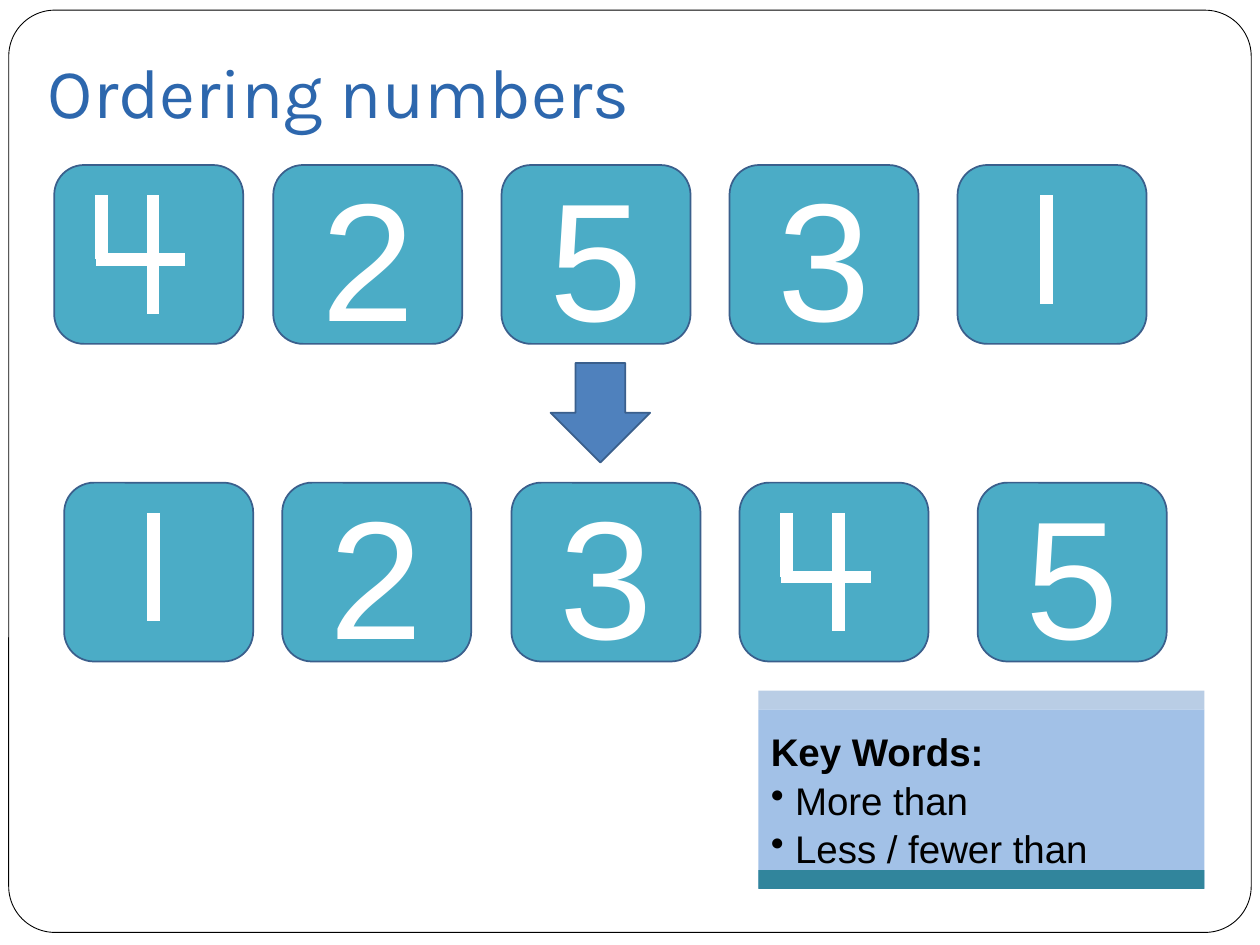
from lxml import etree
from pptx import Presentation
from pptx import util as u
from pptx.dml.color import RGBColor
from pptx.enum import shapes, text
from pptx.oxml.ns import qn

OUTLINE = "3A5F8C"
TILE_WIDTH, TILE_HEIGHT = 108, 102.2

# Digits drawn with straight strokes: x1, y1, x2, y2 from the tile's corner
STROKES = {
    "1": [(51, 17.3, 51, 79.2)],
    "4": [(56.5, 17.3, 56.5, 85), (27, 17.3, 27, 54), (23.8, 54, 74.9, 54)],
}

# Each row: top, then digit and left edge of every tile
ROWS = [
    (94.3, zip("42513"[:3] + "31", (31, 156.2, 286.6, 416.9, 547.2))),
    (275.8, zip("12345", (36.7, 161.3, 292.3, 422.6, 558.7))),
]
ROWS[0] = (94.3, zip("42531", (31, 156.2, 286.6, 416.9, 547.2)))


def color(value):
    return RGBColor.from_string(value)


class SlideBuilder:
    font = "Arial"

    def __init__(self, slide):
        self.slide = slide

    def format_runs(self, paragraph, size, fill, font=None, bold=False):
        for run in paragraph.runs:
            run.font.name = font or self.font
            run.font.size = u.Pt(size)
            run.font.bold = bold
            run.font.color.rgb = color(fill)

    def shape(self, kind, left, top, width, height, fill, line=None, weight=1):
        shape = self.slide.shapes.add_shape(
            kind, u.Pt(left), u.Pt(top), u.Pt(width), u.Pt(height))
        shape.shadow.inherit = False
        shape.fill.solid()
        shape.fill.fore_color.rgb = color(fill)
        if line:
            shape.line.color.rgb = color(line)
            shape.line.width = u.Pt(weight)
        else:
            shape.line.fill.background()
        return shape

    def stroke(self, x1, y1, x2, y2):
        line = self.slide.shapes.add_connector(
            shapes.MSO_CONNECTOR.STRAIGHT, u.Pt(x1), u.Pt(y1), u.Pt(x2), u.Pt(y2))
        line.line.color.rgb = color("FFFFFF")
        line.line.width = u.Pt(7.25)
        etree.SubElement(line.element.spPr, qn("a:effectLst"))

    def title(self, words):
        title = self.slide.shapes.title
        title.left, title.top = u.Pt(20.2), u.Pt(21.6)
        title.width, title.height = u.Pt(663.8), u.Pt(61.2)
        frame = title.text_frame
        frame.text = words
        frame.vertical_anchor = text.MSO_ANCHOR.BOTTOM
        frame.margin_bottom = u.Pt(7.2)
        frame.paragraphs[0].alignment = text.PP_ALIGN.LEFT
        self.format_runs(frame.paragraphs[0], 40, "2D67AD", "Karla")

    def tile(self, digit, left, top):
        tile = self.shape(shapes.MSO_SHAPE.ROUNDED_RECTANGLE, left, top,
                          TILE_WIDTH, TILE_HEIGHT, "4BACC6", OUTLINE)
        if digit in STROKES:
            for x1, y1, x2, y2 in STROKES[digit]:
                self.stroke(left + x1, top + y1, left + x2, top + y2)
        else:
            frame = tile.text_frame
            frame.text = digit
            frame.vertical_anchor = text.MSO_ANCHOR.MIDDLE
            frame.paragraphs[0].alignment = text.PP_ALIGN.CENTER
            self.format_runs(frame.paragraphs[0], 96, "FFFFFF")

    def key_words(self, left, top, width, heading, items):
        rectangle = shapes.MSO_SHAPE.RECTANGLE
        box = self.shape(rectangle, left, top + 10.8, width, 102.2, "A2C1E7")
        self.shape(rectangle, left, top, width, 10.8, "B9CDE5")
        self.shape(rectangle, left, top + 102.6, width, 10.8, "31859C")
        frame = box.text_frame
        frame.text = "\n".join([heading] + [" " + item for item in items])
        frame.vertical_anchor = text.MSO_ANCHOR.MIDDLE
        for index, paragraph in enumerate(frame.paragraphs):
            paragraph.alignment = text.PP_ALIGN.LEFT
            paragraph.line_spacing = 1.05
            self.format_runs(paragraph, 22, "000000", bold=index == 0)
            if index:
                bullet = etree.SubElement(
                    paragraph._p.get_or_add_pPr(), qn("a:buChar"))
                bullet.set("char", "•")


def main():
    presentation = Presentation()
    presentation.slide_width, presentation.slide_height = u.Pt(720), u.Pt(540)
    slide = presentation.slides.add_slide(presentation.slide_layouts[5])
    builder = SlideBuilder(slide)

    # Page frame, placed behind the title
    frame = builder.shape(shapes.MSO_SHAPE.ROUNDED_RECTANGLE,
                          5, 5.8, 710, 527, "FFFFFF", "000000", 0.5)
    frame.adjustments[0] = 0.05
    slide.shapes.title.element.addprevious(frame.element)
    builder.title("Ordering numbers")

    # Key words box
    builder.key_words(433.4, 394.6, 254.9, "Key Words:",
                      ["More than", "Less / fewer than"])

    # Number tiles: mixed above, in order below
    for top, tiles in ROWS:
        for digit, left in tiles:
            builder.tile(digit, left, top)

    # Arrow between the rows
    arrow = builder.shape(shapes.MSO_SHAPE.RIGHT_ARROW,
                          314.6, 207.4, 56.9, 56.9, "4F81BD", OUTLINE)
    arrow.rotation = 90

    presentation.save("out.pptx")


if __name__ == "__main__":
    main()
